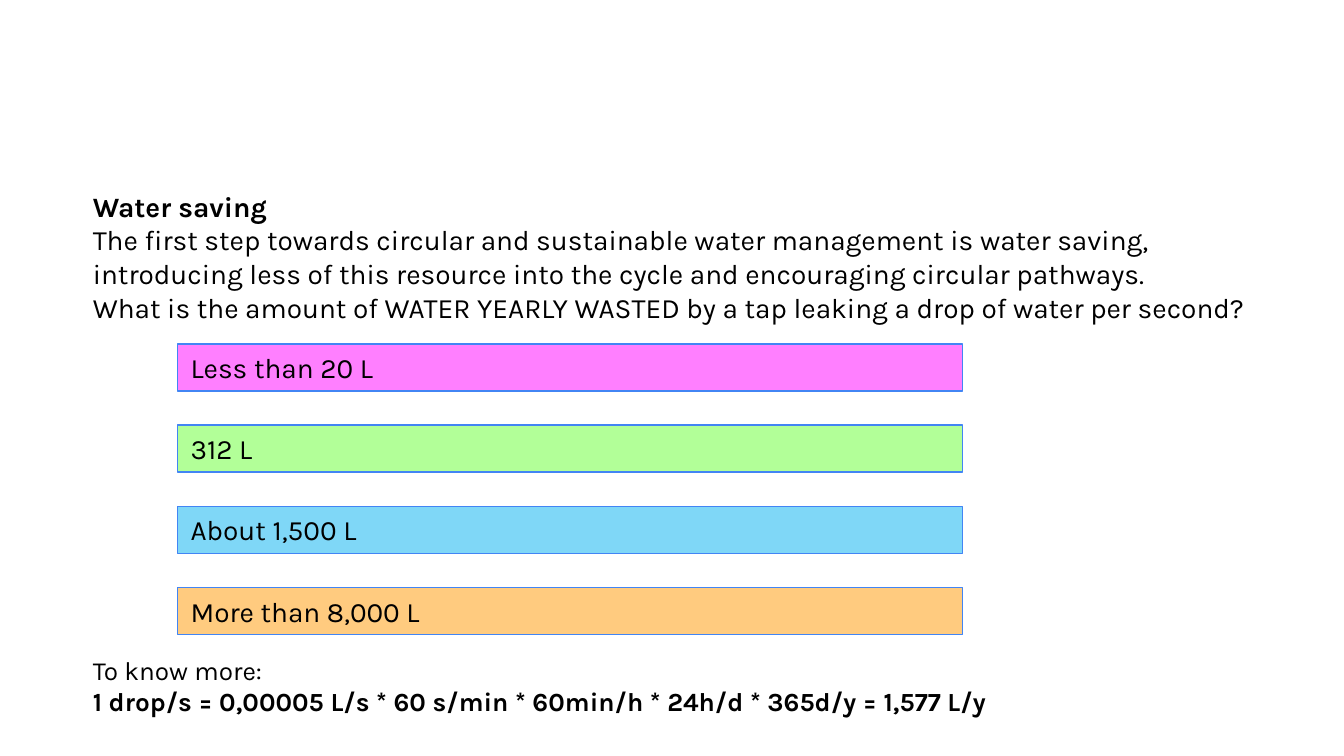
from lxml.etree import SubElement
from pptx import Presentation
from pptx.dml.color import RGBColor
from pptx.enum.shapes import MSO_SHAPE
from pptx.enum.text import MSO_ANCHOR, MSO_AUTO_SIZE, PP_ALIGN
from pptx.oxml.ns import qn
from pptx.util import Inches, Pt

BLACK = RGBColor(0x00, 0x00, 0x00)
BORDER_BLUE = RGBColor(0x42, 0x85, 0xF4)
MAGENTA = RGBColor(0xFF, 0x00, 0xFF)
GREEN = RGBColor(0x66, 0xFF, 0x33)
SKY_BLUE = RGBColor(0x00, 0xB0, 0xF0)
ORANGE = RGBColor(0xFF, 0x99, 0x00)

SLIDE_WIDTH = 10
SLIDE_HEIGHT = SLIDE_WIDTH * 9 / 16
FONT = "Karla"
TEXT_LEFT = 0.69
ANSWER_LEFT, ANSWER_WIDTH, ANSWER_HEIGHT = 1.32, 5.84, 0.35
FIRST_ANSWER_TOP, LAST_ANSWER_TOP = 2.56, 4.37

ANSWERS = [
    ("Less than 20 L", MAGENTA),
    ("312 L", GREEN),
    ("About 1,500 L", SKY_BLUE),
    ("More than 8,000 L", ORANGE),
]
ANSWER_PITCH = (LAST_ANSWER_TOP - FIRST_ANSWER_TOP) / (len(ANSWERS) - 1)
QUESTION = [
    ("Water saving", True),
    ("The first step towards circular and sustainable water management is water saving, "
     "introducing less of this resource into the cycle and encouraging circular pathways.", False),
    ("What is the amount of WATER YEARLY WASTED by a tap leaking a drop of water per second?", False),
]
EXPLANATION = [
    ("To know more:", False),
    ("1 drop/s = 0,00005 L/s * 60 s/min * 60min/h * 24h/d * 365d/y = 1,577 L/y", True),
]


def write_text(paragraph, text, size=15, bold=False):
    paragraph.alignment = PP_ALIGN.LEFT
    run = paragraph.add_run()
    run.text = text
    run.font.name = FONT
    run.font.size = Pt(size)
    run.font.bold = bold
    run.font.color.rgb = BLACK


def set_opacity(shape, percent):
    color = shape.element.spPr.find(qn("a:solidFill"))[0]
    SubElement(color, qn("a:alpha"), val=str(percent * 1000))


def add_answer(slide, row, text, color):
    shape = slide.shapes.add_shape(
        MSO_SHAPE.RECTANGLE,
        Inches(ANSWER_LEFT), Inches(FIRST_ANSWER_TOP + row * ANSWER_PITCH),
        Inches(ANSWER_WIDTH), Inches(ANSWER_HEIGHT))
    shape.shadow.inherit = False
    shape.fill.solid()
    shape.fill.fore_color.rgb = color
    set_opacity(shape, 50)
    shape.line.color.rgb = BORDER_BLUE
    shape.line.width = Pt(0.75)
    frame = shape.text_frame
    frame.word_wrap = True
    frame.auto_size = MSO_AUTO_SIZE.SHAPE_TO_FIT_TEXT
    frame.vertical_anchor = MSO_ANCHOR.MIDDLE
    write_text(frame.paragraphs[0], text)


def add_text_block(slide, lines, top, width, height, size):
    box = slide.shapes.add_textbox(
        Inches(TEXT_LEFT), Inches(top), Inches(width), Inches(height))
    frame = box.text_frame
    frame.word_wrap = True
    frame.auto_size = MSO_AUTO_SIZE.SHAPE_TO_FIT_TEXT
    frame.margin_left = 0
    for index, (text, bold) in enumerate(lines):
        paragraph = frame.add_paragraph() if index else frame.paragraphs[0]
        write_text(paragraph, text, size=size, bold=bold)


def main():
    presentation = Presentation()
    presentation.slide_width = Inches(SLIDE_WIDTH)
    presentation.slide_height = Inches(SLIDE_HEIGHT)
    slide = presentation.slides.add_slide(presentation.slide_layouts[6])
    for row, (text, color) in enumerate(ANSWERS):
        add_answer(slide, row, text, color)
    add_text_block(slide, QUESTION, top=1.36, width=8.79, height=1.11, size=15)
    add_text_block(slide, EXPLANATION, top=4.82, width=SLIDE_WIDTH - TEXT_LEFT, height=0.57, size=14)
    presentation.save("out.pptx")


if __name__ == "__main__":
    main()
